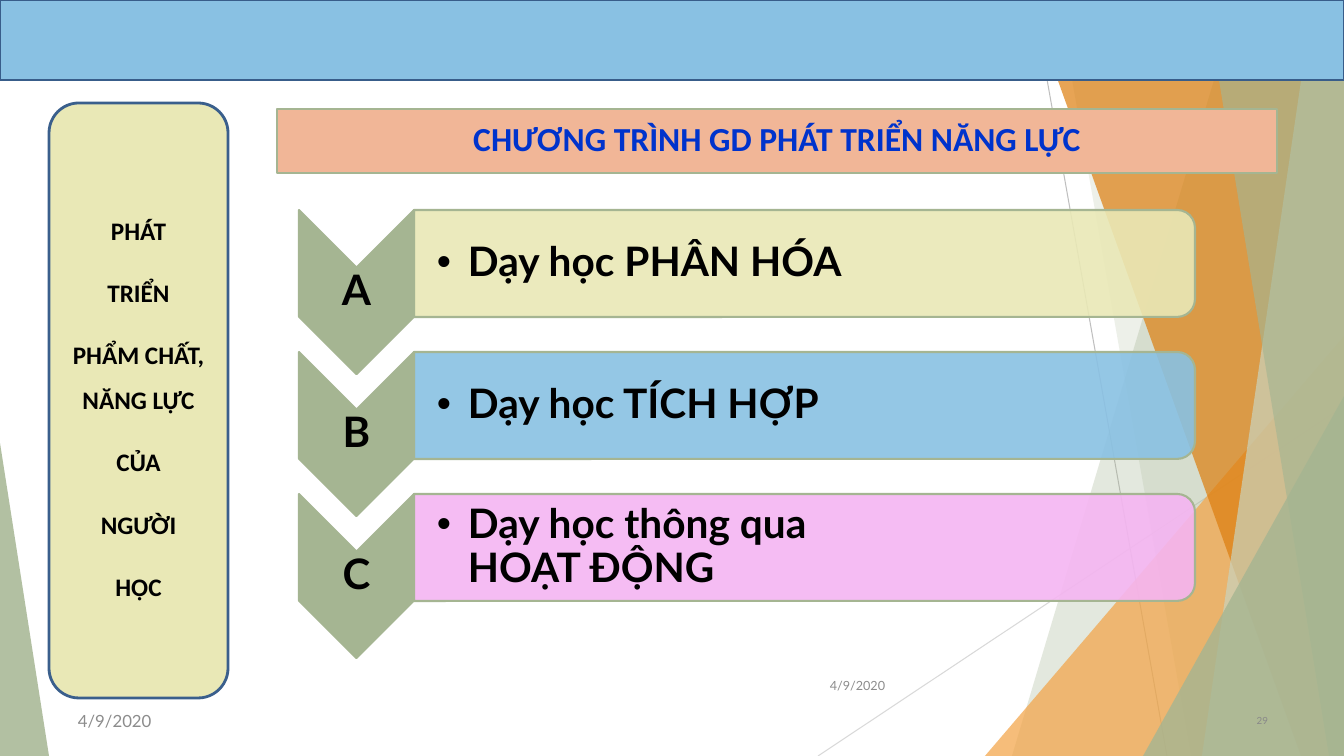
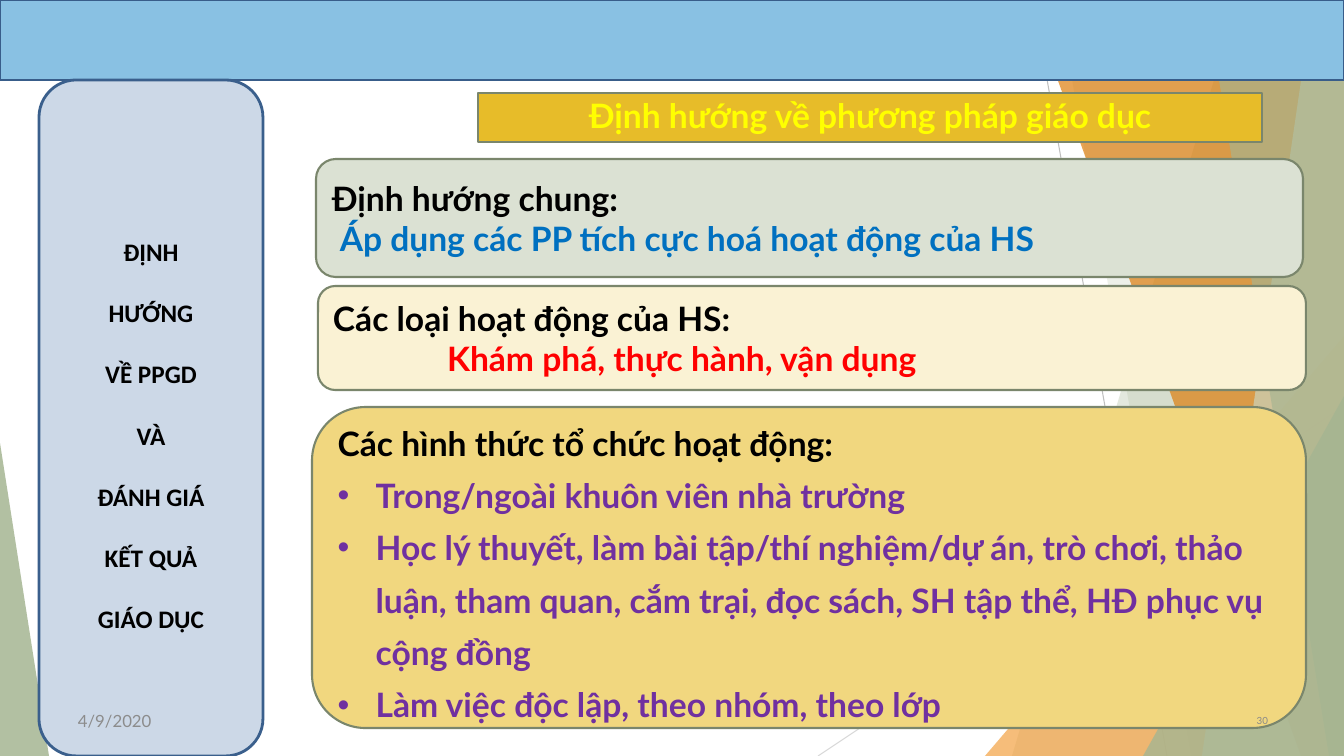
"""Build two slides on competence-based teaching over a shared faceted master."""
from lxml import etree
from pptx import Presentation
from pptx.dml.color import RGBColor
from pptx.enum.shapes import MSO_CONNECTOR, MSO_SHAPE
from pptx.enum.text import MSO_ANCHOR, MSO_AUTO_SIZE, PP_ALIGN
from pptx.oxml.ns import qn
from pptx.util import Emu, Pt

WIDTH, HEIGHT = 1344, 756
SCALE = 12192000 / WIDTH
LEFT, CENTER, RIGHT = PP_ALIGN.LEFT, PP_ALIGN.CENTER, PP_ALIGN.RIGHT
MIDDLE = MSO_ANCHOR.MIDDLE
NO_FIT = MSO_AUTO_SIZE.NONE
STRAIGHT = MSO_CONNECTOR.STRAIGHT
RECTANGLE, ROUNDED = MSO_SHAPE.RECTANGLE, MSO_SHAPE.ROUNDED_RECTANGLE
TRIANGLE, CHEVRON = MSO_SHAPE.ISOSCELES_TRIANGLE, MSO_SHAPE.CHEVRON
TAB = MSO_SHAPE.ROUND_2_SAME_RECTANGLE

COLORS = {
    "sage": "A5B592", "pale_sage": "C9D3BE", "mist": "DBE1D3", "moss": "7A866C",
    "amber": "F3A447", "orange": "DD7E0E", "sky": "89C1E3", "navy": "385D8A",
    "steel": "3A5F8C", "ice": "CCD8E7", "salmon": "F1B697", "straw": "E9E8B6",
    "pink": "F5B5F2", "gold": "E7BC29", "sand": "F1D77F", "cream": "FAF2D4",
    "royal": "0033CC", "blue": "0070C0", "red": "FF0000", "purple": "7030A0",
    "yellow": "FFFF00", "black": "000000", "gray": "8C8C8C", "number": "898989",
    "rule": "BFBFBF", "light_rule": "D9D9D9",
}
HEAD_FONT, BODY_FONT = "Calibri", "Lato"


def px(length):
    """Turn pixels into EMU."""
    return Emu(round(length * SCALE))


def color(name):
    """Look up a palette colour."""
    return RGBColor.from_string(COLORS[name])


def paint(shape, fill, line=None, width=2, alpha=100):
    """Give a shape a flat fill, an optional outline and no shadow."""
    shape.fill.solid()
    shape.fill.fore_color.rgb = color(fill)
    if alpha < 100:
        tint = shape.element.spPr.find(qn("a:solidFill"))[0]
        etree.SubElement(tint, qn("a:alpha"), val=str(alpha * 1000))
    if line:
        shape.line.color.rgb = color(line)
        shape.line.width = Pt(width)
    else:
        shape.line.fill.background()
    shape.shadow.inherit = False


def add_box(page, kind, box, fill, line=None, width=2, alpha=100):
    """Add a painted preset shape."""
    shape = page.shapes.add_shape(kind, *map(px, box))
    paint(shape, fill, line, width, alpha)
    return shape


def add_turned(page, kind, box, fill, alpha=100):
    """Add a shape turned by 90 degrees that fills the given box."""
    left, top, width, height = box
    shift = (width - height) / 2
    turned = (left + shift, top - shift, height, width)
    shape = add_box(page, kind, turned, fill, "sage", 1.5, alpha)
    shape.rotation = 90


def set_font(font, size, name, ink, bold):
    """Set the size, face, colour and weight of a font."""
    font.size, font.name, font.bold = Pt(size), name, bold
    font.color.rgb = color(ink)


def indent(para, margin, bullet=None):
    """Indent a paragraph, hanging it when it has a bullet."""
    properties = para._p.get_or_add_pPr()
    properties.set("marL", str(px(margin)))
    properties.set("indent", str(-px(margin) if bullet else 0))
    if bullet:
        etree.SubElement(properties, qn("a:buFont"), typeface="Arial")
        etree.SubElement(properties, qn("a:buChar"), char=bullet)
    else:
        etree.SubElement(properties, qn("a:buNone"))


def prepare(shape, sides=10, top=5, bottom=5):
    """Return a wrapping text frame anchored in the middle."""
    frame = shape.text_frame
    frame.word_wrap, frame.auto_size = True, NO_FIT
    frame.vertical_anchor = MIDDLE
    frame.margin_left = frame.margin_right = px(sides)
    frame.margin_top, frame.margin_bottom = px(top), px(bottom)
    return frame


def write(frame, text, size, ink, name=BODY_FONT, bold=True, align=LEFT,
          spacing=1.0, gap=0, margin=0, bullet=None):
    """Write a paragraph, reusing the empty first one of the frame."""
    first = not frame.text
    para = frame.paragraphs[0] if first else frame.add_paragraph()
    para.text = text
    para.alignment, para.line_spacing = align, spacing
    para.space_before = Pt(0 if first else gap)
    para.space_after = Pt(0)
    indent(para, margin, bullet)
    set_font(para.font, size, name, ink, bold)


def add_label(page, box, text, size, ink, sides=10, **style):
    """Add a text box with one paragraph."""
    label = page.shapes.add_textbox(*map(px, box))
    write(prepare(label, sides), text, size, ink, **style)


def round_placeholder(holder, box, fill, line, width):
    """Move a placeholder and make it a painted rounded box."""
    holder.left, holder.top, holder.width, holder.height = map(px, box)
    outline = etree.SubElement(holder.element.spPr, qn("a:prstGeom"), prst="roundRect")
    etree.SubElement(outline, qn("a:avLst"))
    paint(holder, fill, line, width)
    return prepare(holder)


def add_rule(page, start, end, ink):
    """Add a thin background line."""
    rule = page.shapes.add_connector(STRAIGHT, *map(px, start + end))
    rule.line.color.rgb = color(ink)
    rule.line.width = Pt(0.75)
    etree.SubElement(rule.element.spPr, qn("a:effectLst"))
    return rule


def add_wedge(page, top_x, bottom_x, fill, alpha):
    """Add a full-height facet that reaches the right edge."""
    builder = page.shapes.build_freeform(top_x, 0, scale=SCALE)
    builder.add_line_segments([(WIDTH, 0), (WIDTH, HEIGHT), (bottom_x, HEIGHT)], close=True)
    wedge = builder.convert_to_shape()
    paint(wedge, fill, alpha=alpha)
    return wedge


def add_corner(page, box, peak, fill, alpha):
    """Add a right-angled triangle with its peak at one side."""
    corner = add_box(page, TRIANGLE, box, fill, alpha=alpha)
    corner.adjustments[0] = peak
    return corner


def decorate_master(page, master):
    """Draw the facets and top band and hand them to the slide master."""
    parts = [
        add_rule(page, (1033, 0), (1167, HEIGHT), "rule"),
        add_rule(page, (WIDTH, 406), (818, HEIGHT), "light_rule"),
        add_wedge(page, 1238, 1012, "sage", 30),
        add_wedge(page, 1058, 1191, "sage", 20),
        add_corner(page, (985, 336, 359, 420), 1, "amber", 72),
        add_wedge(page, 1029, 1301, "orange", 70),
        add_wedge(page, 1313, 1202, "pale_sage", 70),
        add_wedge(page, 1206, 1329, "sage", 65),
        add_corner(page, (1143, 396, 201, 360), 1, "sage", 80),
        add_corner(page, (0, 443, 49, 313), 0, "sage", 85),
        add_box(page, RECTANGLE, (0, 0, WIDTH, 80), "sky", "navy"),
    ]
    for order, part in enumerate(parts):
        part.element.xpath(".//p:cNvPr")[0].set("id", str(100 + order))
        master.shapes.element.insert(2 + order, part.element)


def add_title(page, box, text, fill, line, width, ink, name):
    """Set the slide title in a rounded bar."""
    frame = round_placeholder(page.shapes.title, box, fill, line, width)
    write(frame, text, 24, ink, name, align=CENTER, spacing=0.9)


def add_footer(page, number):
    """Add the date and the slide number."""
    add_label(page, (68, 701, 314, 40), "4/9/2020", 12, "gray", bold=False)
    add_label(page, (964, 701, 314, 40), number, 7, "number", bold=False, align=RIGHT)


def add_side_panel(page, box, lines, fill, spacing, gap, top=5):
    """Add the tall panel at the left with one centred phrase a line."""
    frame = prepare(add_box(page, ROUNDED, box, fill, "steel"), 0, top)
    for line in lines:
        write(frame, line, 18, "black", HEAD_FONT, align=CENTER, spacing=spacing, gap=gap)


def add_chevron_row(page, box, letter, text, fill):
    """Add a lettered chevron with its bulleted bar."""
    left, top, width, height = box
    arrow = 115
    bar = (left + arrow, top, width - arrow, height)
    add_turned(page, CHEVRON, (left, top, arrow, 164), "sage")
    add_label(page, (left, top + 57, arrow, 49), letter, 30, "black", 2,
              align=CENTER, spacing=0.9)
    add_turned(page, TAB, bar, fill, 90)
    add_label(page, bar, text, 29, "black", 23, spacing=0.9, margin=31, bullet="•")


def add_note(page, box, heading, text, fill, ink, margin):
    """Add a rounded note with a heading and an indented line."""
    frame = prepare(add_box(page, ROUNDED, box, fill, "moss", 1.5))
    write(frame, heading, 24, "black")
    write(frame, text, 24, ink, margin=margin)


def build_program(page):
    """Fill the slide on the competence programme."""
    add_title(page, (277, 109, 1000, 64), "CHƯƠNG TRÌNH GD PHÁT TRIỂN NĂNG LỰC",
              "salmon", "sage", 2, "royal", HEAD_FONT)
    rows = [("A", "Dạy học PHÂN HÓA", "straw"),
            ("B", "Dạy học TÍCH HỢP", "sky"),
            ("C", "Dạy học thông qua\vHOẠT ĐỘNG", "pink")]
    for order, row in enumerate(rows):
        add_chevron_row(page, (299, 210 + 142 * order, 896, 107), *row)
    lines = ["PHÁT", "TRIỂN", "PHẨM CHẤT, NĂNG LỰC", "CỦA", "NGƯỜI", "HỌC"]
    add_side_panel(page, (49, 103, 179, 595), lines, "straw", 1.5, 12)
    add_label(page, (794, 666, 101, 40), "4/9/2020", 9, "gray", bold=False, align=RIGHT)
    add_footer(page, "29")


def build_methods(page):
    """Fill the slide on teaching methods."""
    add_title(page, (478, 93, 784, 49), "Định hướng về phương pháp giáo dục",
              "gold", "moss", 1.5, "yellow", BODY_FONT)
    lines = ["ĐỊNH", "HƯỚNG", "VỀ PPGD", "VÀ", "ĐÁNH GIÁ", "KẾT QUẢ", "GIÁO DỤC"]
    add_side_panel(page, (39, 80, 224, 676), lines, "ice", 1.0, 22, 39)
    add_note(page, (316, 159, 987, 118), "Định hướng chung:",
             "Áp dụng các PP tích cực hoá hoạt động của HS", "mist", "blue", 8)
    add_note(page, (318, 286, 988, 104), "Các loại hoạt động của HS:",
             "Khám phá, thực hành, vận dụng", "cream", "red", 114)
    frame = round_placeholder(page.placeholders[1], (312, 407, 994, 321),
                              "sand", "moss", 1.5)
    write(frame, "Các hình thức tổ chức hoạt động:", 24, "black", spacing=1.3)
    for item in ("Trong/ngoài khuôn viên nhà trường",
                 "Học lý thuyết, làm bài tập/thí nghiệm/dự án, trò chơi, thảo luận, "
                 "tham quan, cắm trại, đọc sách, SH tập thể, HĐ phục vụ cộng đồng",
                 "Làm việc độc lập, theo nhóm, theo lớp"):
        write(frame, item, 24, "purple", spacing=1.3, margin=38, bullet="•")
    add_footer(page, "30")


def main():
    """Build and save the deck."""
    deck = Presentation()
    deck.slide_width, deck.slide_height = px(WIDTH), px(HEIGHT)
    title_only, title_and_body = deck.slide_layouts[5], deck.slide_layouts[1]
    program = deck.slides.add_slide(title_only)
    decorate_master(program, deck.slide_master)
    build_program(program)
    build_methods(deck.slides.add_slide(title_and_body))
    deck.save("out.pptx")


if __name__ == "__main__":
    main()
